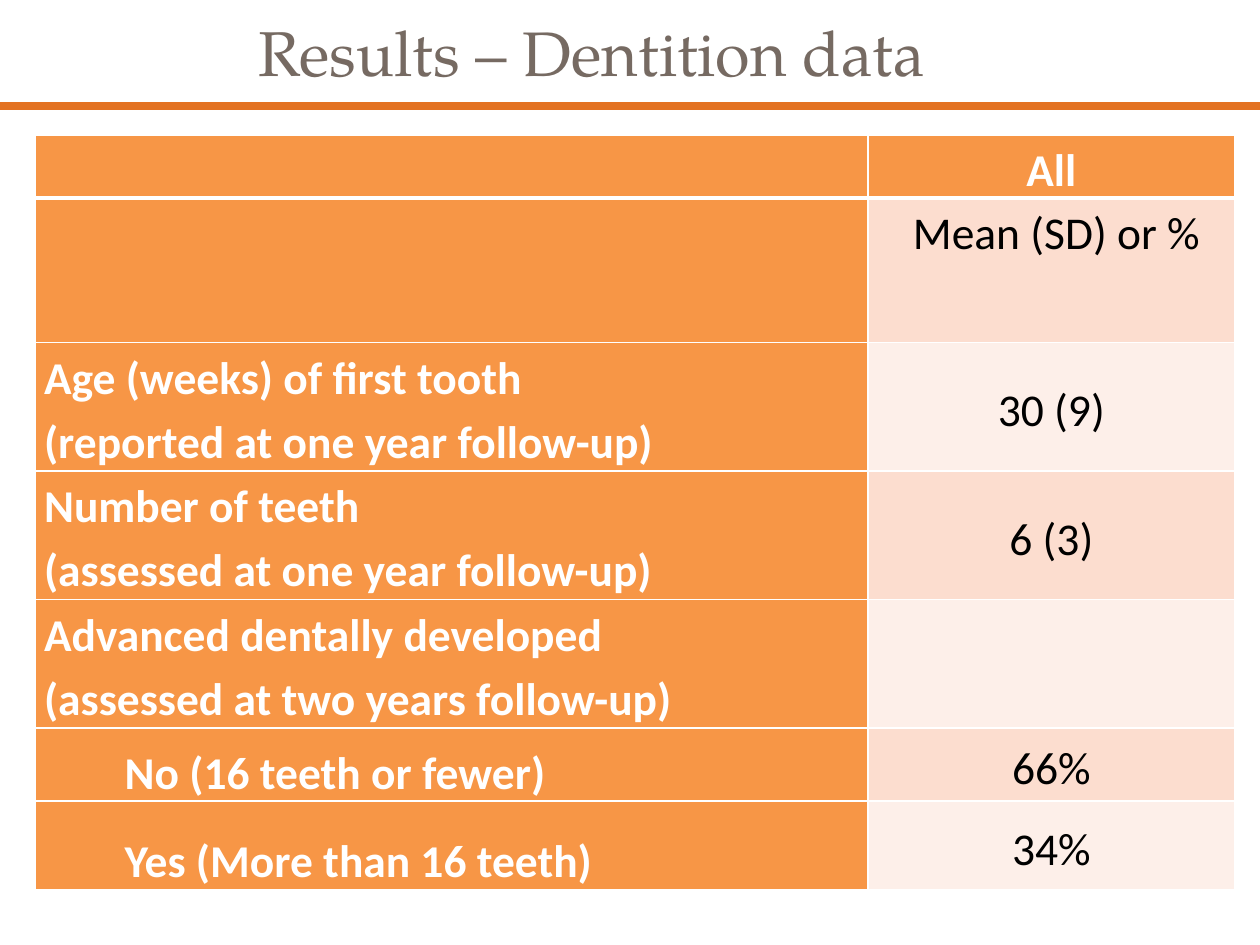
from lxml import etree
from pptx import Presentation
from pptx import util as u
from pptx.dml.color import RGBColor
from pptx.enum import shapes, text
from pptx.oxml import ns

ORANGE = RGBColor(0xF7, 0x96, 0x46)
RULE = RGBColor(0xE3, 0x72, 0x22)
TITLE = RGBColor(0x76, 0x6A, 0x62)
BANDS = [RGBColor(0xFC, 0xDD, 0xCF), RGBColor(0xFD, 0xEF, 0xE9)]
WHITE = RGBColor(0xFF, 0xFF, 0xFF)
BLACK = RGBColor(0, 0, 0)
CENTER, LEFT = text.PP_ALIGN.CENTER, text.PP_ALIGN.LEFT
TOP, MIDDLE, BOTTOM = text.MSO_ANCHOR.TOP, text.MSO_ANCHOR.MIDDLE, text.MSO_ANCHOR.BOTTOM


def write(frame, content, size=26, font="Calibri", color=BLACK, bold=False,
          align=CENTER, spacing=1.15, indent=0):
    for number, line in enumerate(content.split("\n")):
        paragraph = frame.add_paragraph() if number else frame.paragraphs[0]
        paragraph.alignment = align
        paragraph.line_spacing = spacing
        if indent:
            properties = paragraph._p.get_or_add_pPr()
            properties.set("marL", str(u.Inches(indent)))
            properties.set("indent", "0")
        run = paragraph.add_run()
        run.text = line
        run.font.size = u.Pt(size)
        run.font.name = font
        run.font.bold = bold
        run.font.color.rgb = color


def set_borders(cell, **widths):
    properties = cell._tc.get_or_add_tcPr()
    for position, side in enumerate(("L", "R", "T", "B")):
        line = etree.Element(ns.qn(f"a:ln{side}"), w=str(u.Pt(widths.get(side, 1))))
        fill = etree.SubElement(line, ns.qn("a:solidFill"))
        etree.SubElement(fill, ns.qn("a:srgbClr"), val=str(WHITE))
        properties.insert(position, line)


presentation = Presentation()
presentation.slide_width, presentation.slide_height = u.Inches(10), u.Inches(7.5)
slide = presentation.slides.add_slide(presentation.slide_layouts[6])

# Title
title = slide.shapes.add_textbox(u.Inches(0.1), u.Inches(0.05), u.Inches(9.29), u.Inches(0.71))
frame = title.text_frame
frame.word_wrap = True
frame.margin_left = 0
frame.vertical_anchor = MIDDLE
write(frame, "Results – Dentition data", size=36, font="TeX Gyre Pagella",
      color=TITLE, spacing=1.0)

# Rule below the title
rule_y = u.Inches(0.84)
rule = slide.shapes.add_connector(shapes.MSO_CONNECTOR.STRAIGHT,
                                  0, rule_y, presentation.slide_width, rule_y)
rule.line.color.rgb = RULE
rule.line.width = u.Pt(4.5)
etree.SubElement(rule._element.spPr, ns.qn("a:effectLst"))

# Table: row height, label, label anchor, label indent, value, value anchor
rows = [
    (0.5, "", TOP, 0, "All", TOP),
    (1.15, "", TOP, 0, " Mean (SD) or %", TOP),
    (1.02, "Age (weeks) of first tooth\n(reported at one year follow-up)", TOP, 0, "30 (9)", MIDDLE),
    (1.02, "Number of teeth\n(assessed at one year follow-up)", TOP, 0, "6 (3)", MIDDLE),
    (1.02, "Advanced dentally developed\n(assessed at two years follow-up)", TOP, 0, "", TOP),
    (0.58, "No (16 teeth or fewer)", BOTTOM, 0.64, "66%", MIDDLE),
    (0.7, "Yes (More than 16 teeth)", BOTTOM, 0.64, "34%", MIDDLE),
]
column_widths = [6.61, 2.91]
table = slide.shapes.add_table(
    len(rows), len(column_widths), u.Inches(0.28), u.Inches(1.07),
    u.Inches(sum(column_widths)), u.Inches(sum(row[0] for row in rows))).table
for column, width in zip(table.columns, column_widths):
    column.width = u.Inches(width)

for index, (height, label, label_anchor, indent, value, value_anchor) in enumerate(rows):
    table.rows[index].height = u.Inches(height)
    header = index == 0
    value_fill = ORANGE if header else BANDS[(index - 1) % 2]
    cells = [
        (label, label_anchor, ORANGE, dict(color=WHITE, bold=True, align=LEFT, indent=indent)),
        (value, value_anchor, value_fill, dict(color=WHITE if header else BLACK, bold=header)),
    ]
    for column, (content, anchor, fill, style) in enumerate(cells):
        cell = table.cell(index, column)
        cell.margin_left = cell.margin_right = u.Inches(0.07)
        cell.margin_top = cell.margin_bottom = 0
        cell.vertical_anchor = anchor
        cell.fill.solid()
        cell.fill.fore_color.rgb = fill
        set_borders(cell, T=3 if index == 1 else 1, B=3 if header else 1)
        if content:
            write(cell.text_frame, content, **style)

presentation.save("out.pptx")
